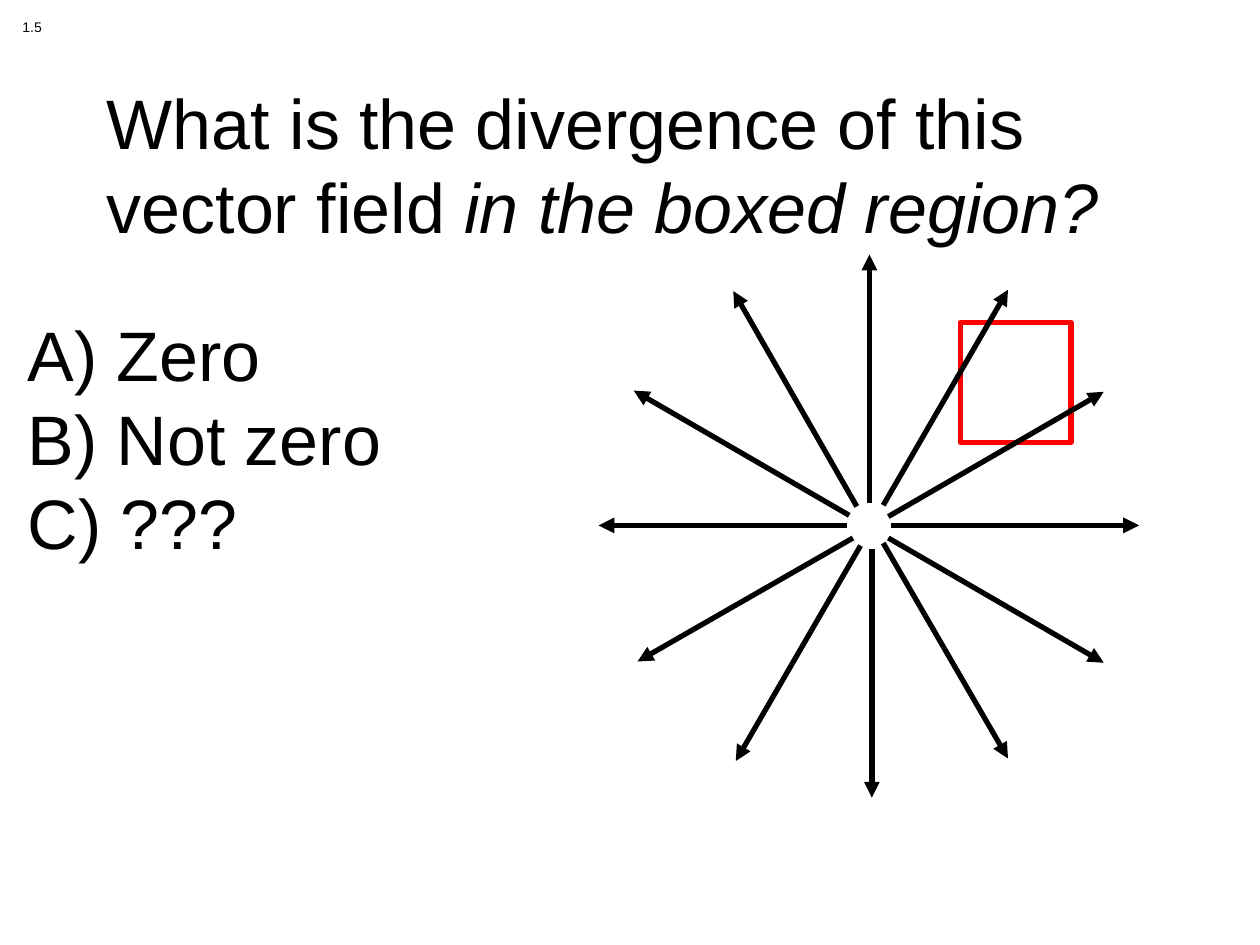
import math
from lxml import etree
from pptx import Presentation, util as u
from pptx.dml.color import RGBColor
from pptx.enum import shapes, text
from pptx.oxml.ns import qn

BLACK = RGBColor(0, 0, 0)
RED = RGBColor(255, 0, 0)

deck = Presentation()
deck.slide_width, deck.slide_height = u.Inches(10), u.Inches(7.5)
slide = deck.slides.add_slide(deck.slide_layouts[6])


def add_text(paragraphs, box, size=40, pitch=None, lettered=False,
             anchor=text.MSO_ANCHOR.TOP):
    """Add paragraphs, each a list of (words, italic) runs."""
    frame = slide.shapes.add_textbox(*map(u.Inches, box)).text_frame
    frame.word_wrap = True
    frame.vertical_anchor = anchor
    for i, runs in enumerate(paragraphs):
        para = frame.paragraphs[0] if i == 0 else frame.add_paragraph()
        if pitch:
            para.line_spacing = u.Pt(pitch)
        for words, italic in runs:
            run = para.add_run()
            run.text = words
            run.font.name = "Arial"
            run.font.size = u.Pt(size)
            run.font.italic = italic
            run.font.color.rgb = BLACK
        if lettered:
            props = para._p.get_or_add_pPr()
            props.set("marL", str(u.Inches(0.5)))
            props.set("indent", str(u.Inches(-0.5)))
            etree.SubElement(props, qn("a:buFont"), typeface="Arial")
            etree.SubElement(props, qn("a:buAutoNum"), type="alphaUcParenR")


# Question
add_text([[("What is the divergence of this vector field ", False),
           ("in the boxed region?", True)]],
         (0.75, 0.67, 8.5, 1.25), pitch=48, anchor=text.MSO_ANCHOR.MIDDLE)

# Boxed region
region = slide.shapes.add_shape(shapes.MSO_SHAPE.RECTANGLE, *map(
    u.Inches, (7.62, 2.56, 0.88, 0.95)))
region.shadow.inherit = False
region.fill.background()
region.line.color.rgb = RED
region.line.width = u.Pt(3)

# Answers and question number
add_text([[(answer, False)] for answer in (" Zero", " Not zero", " ???")],
         (0.12, 2.42, 4.75, 2.12), pitch=48, lettered=True)
add_text([[("1.5", False)]], (0.08, 0.1, 0.39, 0.23), size=8)

# Radial field: equal arrows every 30 degrees, counterclockwise from the right
ARROW_LENGTH = 1.97
arrow_starts = [(7.07, 4.17), (7.05, 4.1), (7.01, 4.01), (6.9, 3.99),
                (6.8, 4.02), (6.74, 4.09), (6.72, 4.17), (6.77, 4.27),
                (6.83, 4.33), (6.92, 4.36), (7.01, 4.31), (7.05, 4.27)]
field = slide.shapes.add_group_shape()
for step, (x, y) in enumerate(arrow_starts):
    angle = math.radians(30 * step)
    tip_x = round(x + ARROW_LENGTH * math.cos(angle), 2)
    tip_y = round(y - ARROW_LENGTH * math.sin(angle), 2)
    arrow = field.shapes.add_connector(
        shapes.MSO_CONNECTOR.STRAIGHT, *map(u.Inches, (x, y, tip_x, tip_y)))
    arrow.line.color.rgb = BLACK
    arrow.line.width = u.Pt(3)
    etree.SubElement(arrow.line._get_or_add_ln(), qn("a:tailEnd"), type="triangle")
    etree.SubElement(arrow._element.spPr, qn("a:effectLst"))

deck.save("out.pptx")
